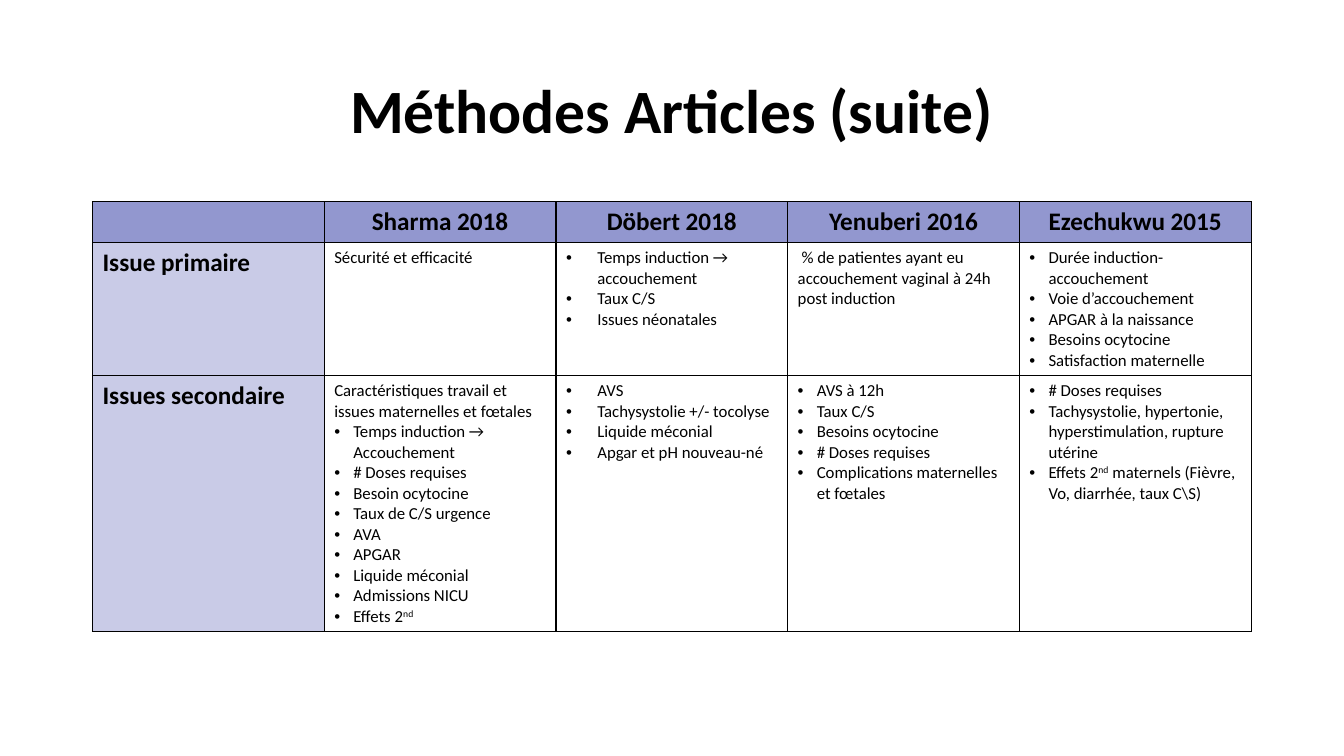
from lxml.etree import SubElement
from pptx import Presentation
from pptx.dml.color import RGBColor
from pptx.enum.text import MSO_ANCHOR, MSO_AUTO_SIZE, PP_ALIGN
from pptx.oxml.ns import qn
from pptx.util import Cm, Pt

COLOURS = {"text": "000000", "border": "000000", "header": "9297CF",
           "label": "C9CBE7", "body": "FFFFFF"}
FORMATS = {
    "title": {"name": "Calibri", "size": Pt(44), "bold": True},
    "header": {"name": "Calibri", "size": Pt(18), "bold": True},
    "label": {"name": "Calibri", "size": Pt(18), "bold": True},
    "body": {"name": "Calibri", "size": Pt(12), "bold": False},
}
BULLET = "• "
SUPERSCRIPT = "^"
LEFT, WIDTH = Cm(2.33), Cm(29.2)
TABLE_TOP = Cm(5.08)
ROW_HEIGHTS = [Cm(1.04), Cm(3.35), Cm(6.43)]
BULLET_INDENTS = [Cm(0), Cm(0.48), Cm(0.79), Cm(0.48), Cm(0.48)]

ROWS = [
    ["", "Sharma 2018", "Döbert 2018", "Yenuberi 2016", "Ezechukwu 2015"],
    [
        "Issue primaire",
        "Sécurité et efficacité",
        "• Temps induction → accouchement\n• Taux C/S\n• Issues néonatales",
        " % de patientes ayant eu accouchement vaginal à 24h post induction",
        "• Durée induction-accouchement\n• Voie d’accouchement\n"
        "• APGAR à la naissance\n• Besoins ocytocine\n• Satisfaction maternelle",
    ],
    [
        "Issues secondaire",
        "Caractéristiques travail et issues maternelles et fœtales\n"
        "• Temps induction → Accouchement\n• # Doses requises\n"
        "• Besoin ocytocine\n• Taux de C/S urgence\n• AVA\n• APGAR\n"
        "• Liquide méconial\n• Admissions NICU\n• Effets 2^nd^",
        "• AVS\n• Tachysystolie +/- tocolyse\n• Liquide méconial\n"
        "• Apgar et pH nouveau-né",
        "• AVS à 12h\n• Taux C/S\n• Besoins ocytocine\n• # Doses requises\n"
        "• Complications maternelles et fœtales",
        "• # Doses requises\n"
        "• Tachysystolie, hypertonie, hyperstimulation, rupture utérine\n"
        "• Effets 2^nd^ maternels (Fièvre, Vo, diarrhée, taux C\\S)",
    ],
]


def rgb(name):
    return RGBColor.from_string(COLOURS[name])


def format_font(font, role):
    for attribute, value in FORMATS[role].items():
        setattr(font, attribute, value)
    font.color.rgb = rgb("text")


def add_runs(paragraph, text, role):
    """Write text as runs, raising the parts enclosed in superscript marks."""
    for index, part in enumerate(text.split(SUPERSCRIPT)):
        if part:
            run = paragraph.add_run()
            run.text = part
            format_font(run.font, role)
            if index % 2:
                run._r.get_or_add_rPr().set("baseline", "30000")


def add_bullet(paragraph, indent):
    properties = paragraph._p.get_or_add_pPr()
    properties.set("marL", str(indent))
    properties.set("indent", str(-indent))
    SubElement(properties, qn("a:buFont"), typeface="Arial")
    SubElement(properties, qn("a:buChar"), char=BULLET.strip())


def add_borders(cell):
    properties = cell._tc.get_or_add_tcPr()
    for side in ("lnL", "lnR", "lnT", "lnB"):
        line = SubElement(properties, qn(f"a:{side}"), w=str(Pt(1)))
        fill = SubElement(line, qn("a:solidFill"))
        SubElement(fill, qn("a:srgbClr"), val=COLOURS["border"])


def fill_cell(cell, text, role, indent):
    add_borders(cell)
    cell.fill.solid()
    cell.fill.fore_color.rgb = rgb(role)
    frame = cell.text_frame
    for index, line in enumerate(text.split("\n")):
        paragraph = frame.add_paragraph() if index else frame.paragraphs[0]
        paragraph.alignment = PP_ALIGN.CENTER if role == "header" else PP_ALIGN.LEFT
        if line.startswith(BULLET):
            add_bullet(paragraph, indent)
        add_runs(paragraph, line.removeprefix(BULLET), role)


def cell_role(row, column):
    if row == 0:
        return "header"
    return "body" if column else "label"


def set_title(slide, text):
    title = slide.shapes.title
    title.left, title.top, title.width, title.height = LEFT, Cm(1.01), WIDTH, Cm(3.68)
    frame = title.text_frame
    frame.auto_size = MSO_AUTO_SIZE.NONE
    frame.vertical_anchor = MSO_ANCHOR.MIDDLE
    paragraph = frame.paragraphs[0]
    paragraph.alignment = PP_ALIGN.CENTER
    paragraph.line_spacing = 0.9
    add_runs(paragraph, text, "title")


def add_article_table(slide):
    table = slide.shapes.add_table(len(ROWS), len(ROWS[0]), LEFT, TABLE_TOP,
                                   WIDTH, sum(ROW_HEIGHTS)).table
    table.horz_banding = False
    for row, texts in enumerate(ROWS):
        table.rows[row].height = ROW_HEIGHTS[row]
        for column, text in enumerate(texts):
            fill_cell(table.cell(row, column), text, cell_role(row, column),
                      BULLET_INDENTS[column])


def main():
    presentation = Presentation()
    presentation.slide_width, presentation.slide_height = Cm(33.87), Cm(19.05)
    slide = presentation.slides.add_slide(presentation.slide_layouts[5])
    set_title(slide, "Méthodes Articles (suite)")
    add_article_table(slide)
    presentation.save("out.pptx")


if __name__ == "__main__":
    main()
